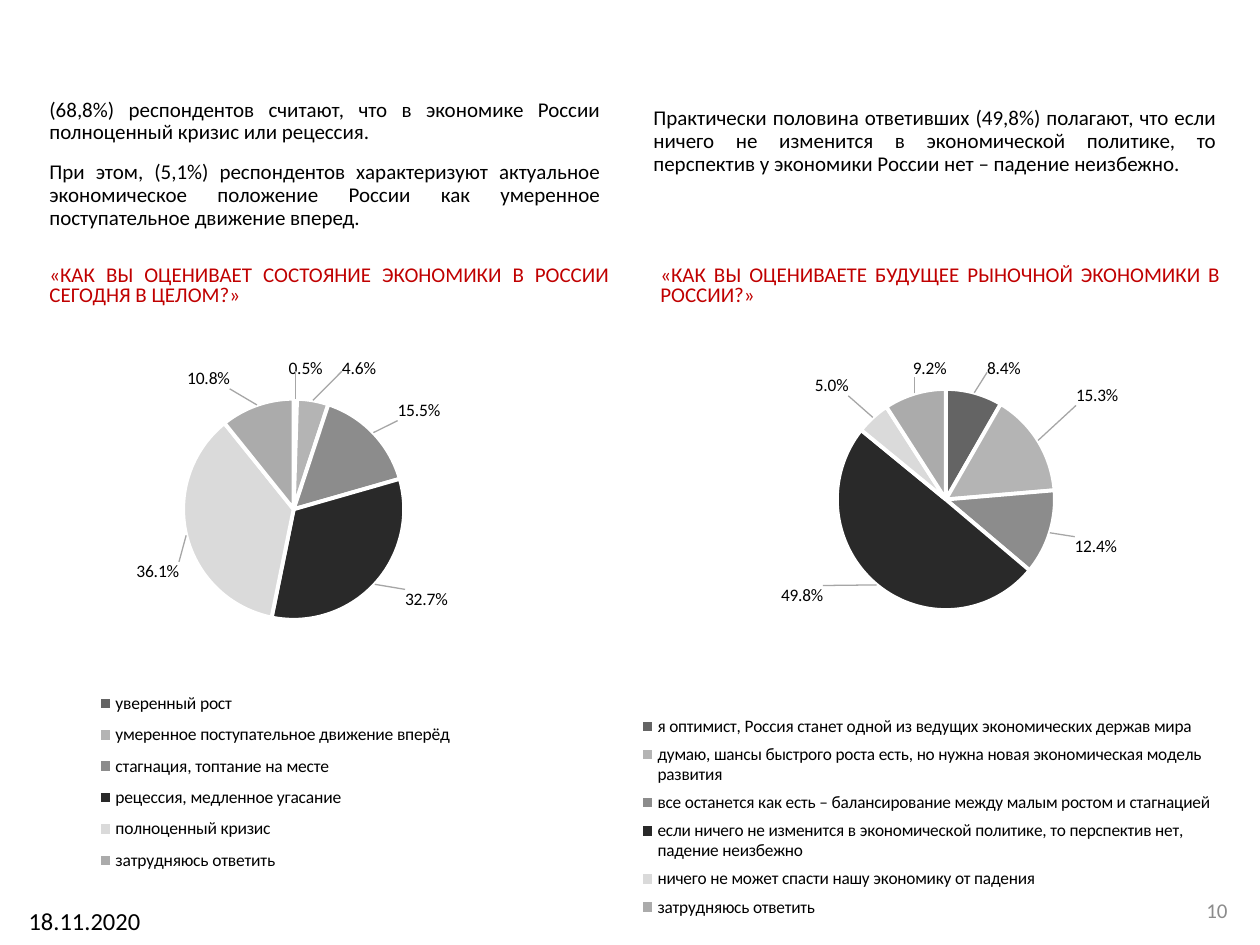
"""Builds a survey slide with two pie charts on the economy of Russia."""
from dataclasses import dataclass

import pptx
import pptx.chart.data
import pptx.dml.color
import pptx.enum.chart
import pptx.enum.text
import pptx.oxml
import pptx.oxml.ns
import pptx.util

RGB = pptx.dml.color.RGBColor
ALIGN = pptx.enum.text.PP_ALIGN
ANCHOR = pptx.enum.text.MSO_ANCHOR
CHART = pptx.enum.chart
SCALE = 914400 / 126
FONT = "Calibri"
BLACK = RGB(0x00, 0x00, 0x00)
WHITE = RGB(0xFF, 0xFF, 0xFF)
RED = RGB(0xC0, 0x00, 0x00)
GREY = RGB(0x8C, 0x8C, 0x8C)
SHADES = [
    RGB(0x64, 0x64, 0x64), RGB(0xB4, 0xB4, 0xB4), RGB(0x8C, 0x8C, 0x8C),
    RGB(0x29, 0x29, 0x29), RGB(0xDA, 0xDA, 0xDA), RGB(0xAB, 0xAB, 0xAB),
]


@dataclass
class Box:
    left: int
    top: int
    width: int
    height: int

    def emu(self) -> list[int]:
        return [px(n) for n in (self.left, self.top, self.width, self.height)]


@dataclass
class Slice:
    name: str
    value: float
    shift: tuple[int, int]


@dataclass
class Pie:
    box: Box
    plot: Box
    legend: Box
    slices: list[Slice]


PIES = [
    Pie(Box(0, 359, 591, 576), Box(85, 40, 417, 221), Box(92, 323, 365, 200), [
        Slice("уверенный рост", 0.005, (10, -20)),
        Slice("умеренное поступательное движение вперёд", 0.046, (28, -22)),
        Slice("стагнация, топтание на месте", 0.155, (19, -7)),
        Slice("рецессия, медленное угасание", 0.327, (25, 0)),
        Slice("полноценный кризис", 0.361, (0, 25)),
        Slice("затрудняюсь ответить", 0.108, (-25, -9)),
    ]),
    Pie(Box(636, 359, 586, 576), Box(108, 30, 413, 221), Box(4, 349, 580, 218), [
        Slice("я оптимист, Россия станет одной из ведущих экономических "
              "держав мира", 0.084, (11, -13)),
        Slice("думаю, шансы быстрого роста есть, но нужна новая "
              "экономическая модель развития", 0.153, (32, -31)),
        Slice("все останется как есть – балансирование между малым ростом "
              "и стагнацией", 0.124, (18, 2)),
        Slice("если ничего не изменится в экономической политике, то "
              "перспектив нет, падение неизбежно", 0.498, (-50, -5)),
        Slice("ничего не может спасти нашу экономику от падения", 0.05, (-20, -16)),
        Slice("затрудняюсь ответить", 0.092, (34, -9)),
    ]),
]


def px(n: int) -> int:
    return round(n * SCALE)


def style(font, size: float, color: RGB, bold: bool = False) -> None:
    font.name, font.size, font.bold = FONT, pptx.util.Pt(size), bold
    font.color.rgb = color


def write(slide, box: Box, *lines: str, size: float = 12, color: RGB = BLACK,
          align=ALIGN.JUSTIFY, anchor=ANCHOR.TOP, pitch: float = 1,
          before: float = 0) -> None:
    frame = slide.shapes.add_textbox(*box.emu()).text_frame
    frame.word_wrap = True
    frame.vertical_anchor = anchor
    for i, line in enumerate(lines):
        para = frame.add_paragraph() if i else frame.paragraphs[0]
        para.alignment, para.line_spacing = align, pitch
        para.space_before = pptx.util.Pt(before)
        run = para.add_run()
        run.text = line
        style(run.font, size, color)


def node(body: str):
    return pptx.oxml.parse_xml(body.replace(
        ">", f' {pptx.oxml.ns.nsdecls("c", "a")}>', 1))


def place(host, spot: int, body: str) -> None:
    for old in host.findall(pptx.oxml.ns.qn("c:layout")):
        host.remove(old)
    host.insert(spot, node(
        f"<c:layout><c:manualLayout>{body}</c:manualLayout></c:layout>"))


def frac(box: Box, area: Box, inner: bool = False) -> str:
    mode = '<c:layoutTarget val="inner"/>' if inner else ""
    return (f'{mode}<c:xMode val="edge"/><c:yMode val="edge"/>'
            f'<c:x val="{box.left / area.width:.3f}"/>'
            f'<c:y val="{box.top / area.height:.3f}"/>'
            f'<c:w val="{box.width / area.width:.3f}"/>'
            f'<c:h val="{box.height / area.height:.3f}"/>')


def draw(slide, pie: Pie) -> None:
    data = pptx.chart.data.CategoryChartData(number_format="0.0%")
    data.categories = [part.name for part in pie.slices]
    data.add_series("Series 1", [part.value for part in pie.slices])
    chart = slide.shapes.add_chart(
        CHART.XL_CHART_TYPE.PIE, *pie.box.emu(), data).chart
    style(chart.font, 10, BLACK)
    chart.has_title = False
    chart.has_legend = True
    legend = chart.legend
    legend.position = CHART.XL_LEGEND_POSITION.BOTTOM
    legend.include_in_layout = False
    style(legend.font, 10, BLACK)
    plot = chart.plots[0]
    plot.vary_by_categories = True
    row = plot.series[0]
    tags = row.data_labels
    tags.show_value = True
    tags.number_format, tags.number_format_is_linked = "0.0%", False
    tags.position = CHART.XL_LABEL_POSITION.OUTSIDE_END
    style(tags.font, 10.5, RED, True)
    for i, (part, shade) in enumerate(zip(pie.slices, SHADES)):
        point = row.points[i]
        point.format.fill.solid()
        point.format.fill.fore_color.rgb = shade
        point.format.line.color.rgb = WHITE
        point.format.line.width = pptx.util.Pt(2.25)
        point.data_label.position = CHART.XL_LABEL_POSITION.OUTSIDE_END
    root = chart.element
    place(root.find(".//" + pptx.oxml.ns.qn("c:plotArea")), 0,
          frac(pie.plot, pie.box, True))
    place(root.find(".//" + pptx.oxml.ns.qn("c:legend")), 1,
          frac(pie.legend, pie.box))
    for tag, part in zip(root.iter(pptx.oxml.ns.qn("c:dLbl")), pie.slices):
        x, y = part.shift
        place(tag, 1, f'<c:x val="{x / pie.box.width:.3f}"/>'
                      f'<c:y val="{y / pie.box.height:.3f}"/>')
    group = root.find(".//" + pptx.oxml.ns.qn("c:dLbls"))
    for old in group.findall(pptx.oxml.ns.qn("c:showLeaderLines")):
        group.remove(old)
    group.append(node('<c:showLeaderLines val="1"></c:showLeaderLines>'))
    group.append(node(
        '<c:leaderLines><c:spPr><a:ln w="9525"><a:solidFill>'
        '<a:srgbClr val="A6A6A6"/></a:solidFill></a:ln></c:spPr></c:leaderLines>'))


def main() -> None:
    deck = pptx.Presentation()
    deck.slide_width, deck.slide_height = px(1260), px(945)
    slide = deck.slides.add_slide(deck.slide_layouts[6])
    note = dict(anchor=ANCHOR.BOTTOM, pitch=0.9, before=10)
    head = dict(color=RED, pitch=0.8, before=10)
    write(slide, Box(37, 125, 576, 111),
          "(68,8%) респондентов считают, что в экономике России полноценный "
          "кризис или рецессия.",
          "При этом, (5,1%) респондентов характеризуют актуальное экономическое "
          "положение России как умеренное поступательное движение вперед.", **note)
    write(slide, Box(37, 260, 585, 58),
          "«КАК ВЫ ОЦЕНИВАЕТ СОСТОЯНИЕ ЭКОНОМИКИ В РОССИИ СЕГОДНЯ В ЦЕЛОМ?»", **head)
    write(slide, Box(641, 91, 588, 91),
          "Практически половина ответивших (49,8%) полагают, что если ничего не "
          "изменится в экономической политике, то перспектив у экономики России "
          "нет – падение неизбежно.", **note)
    write(slide, Box(648, 260, 585, 58),
          "«КАК ВЫ ОЦЕНИВАЕТЕ БУДУЩЕЕ РЫНОЧНОЙ ЭКОНОМИКИ В РОССИИ?»", **head)
    write(slide, Box(946, 885, 294, 50), "10", color=GREY, align=ALIGN.RIGHT,
          anchor=ANCHOR.MIDDLE)
    for pie in PIES:
        draw(slide, pie)
    write(slide, Box(0, 900, 169, 45), "18.11.2020", size=14,
          align=ALIGN.CENTER, before=2.8)
    deck.save("out.pptx")


if __name__ == "__main__":
    main()
